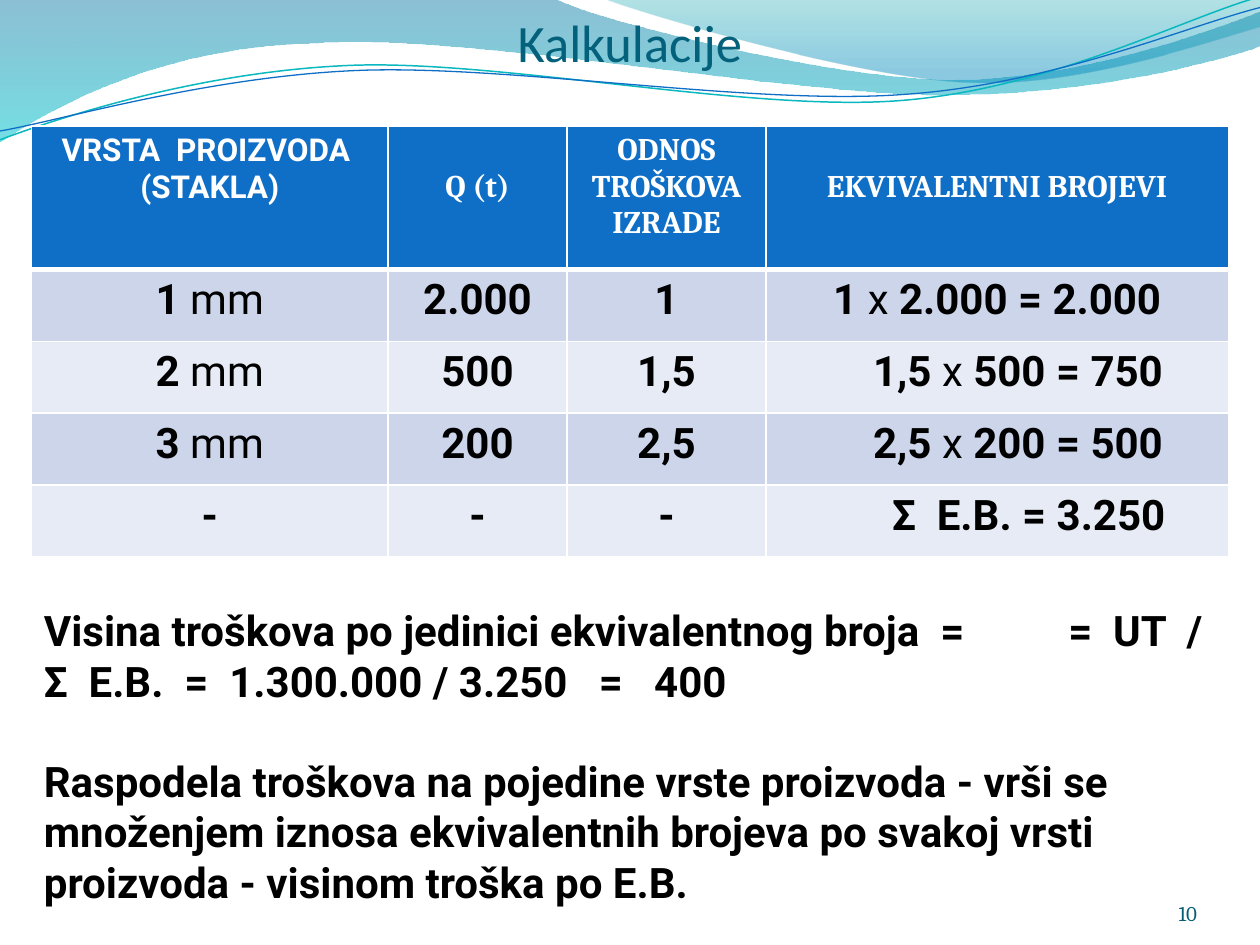
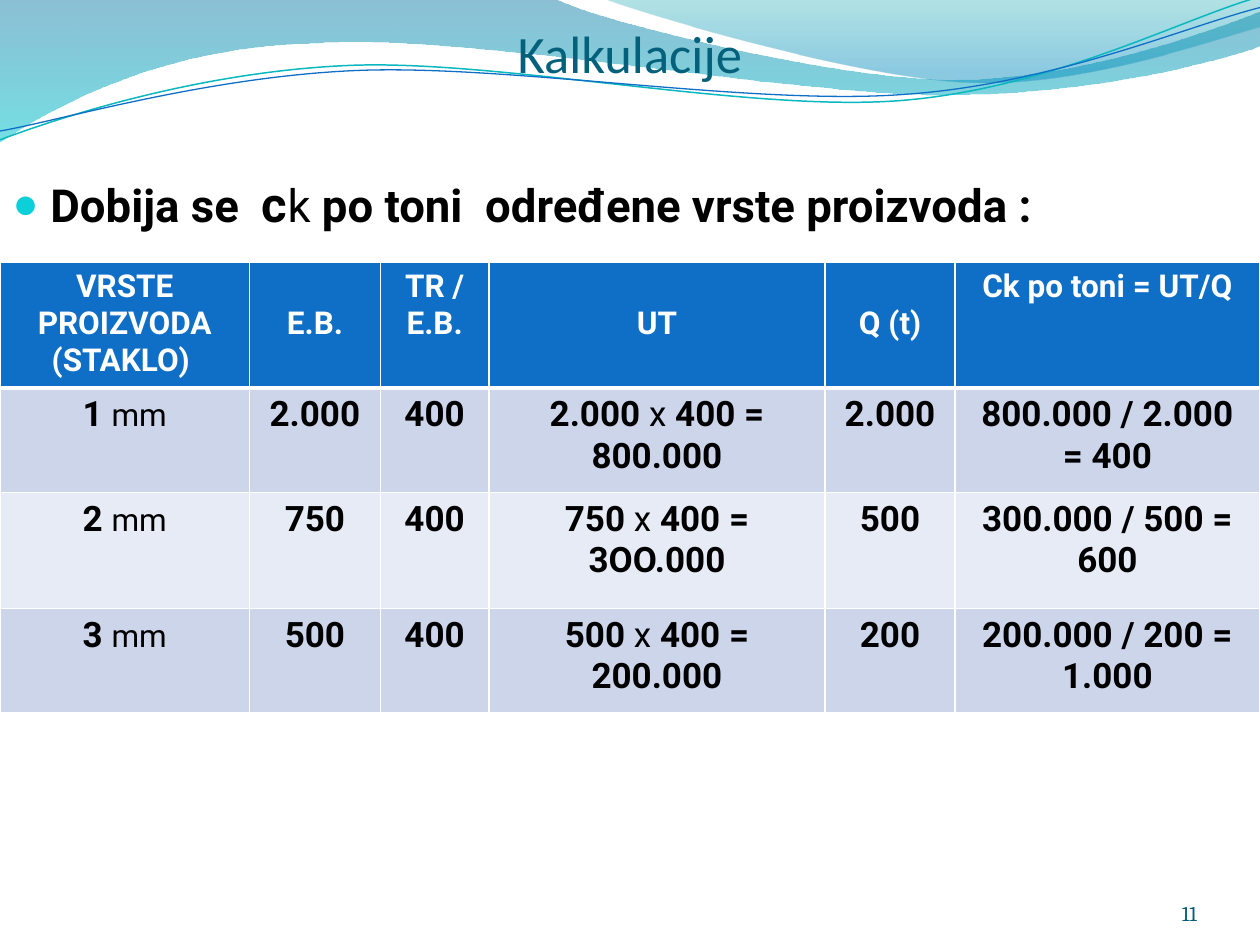
from lxml.etree import SubElement
from pptx import Presentation
from pptx.dml.color import RGBColor
from pptx.enum.text import MSO_ANCHOR, MSO_AUTO_SIZE, PP_ALIGN
from pptx.oxml.ns import qn
from pptx.util import Inches, Pt

WHITE = RGBColor(0xFF, 0xFF, 0xFF)
BLACK = RGBColor(0x00, 0x00, 0x00)
BLUE = RGBColor(0x0F, 0x6F, 0xC6)
TEAL = RGBColor(0x0A, 0xB8, 0xBF)
CYAN = RGBColor(0x0B, 0xD0, 0xD9)
TITLE = RGBColor(0x04, 0x61, 0x7B)
NUMBER = RGBColor(0x04, 0x5D, 0x75)
BANDS = (RGBColor(0xCC, 0xD5, 0xEA), RGBColor(0xE7, 0xEB, 0xF5))
ROBOTO, CAMBRIA, CALIBRI = "Roboto", "Cambria", "Calibri"
HEADER_DROP = 0.29

WAVE_BANDS = [
    dict(start=(0, 0), segments=[
        [(4.4, -0.01)],
        [(4.76, 0.17), (6.64, 0.63), (7.58, 0.63)],
        [(8.53, 0.63), (9.58, 0.26), (10, 0.09)],
        [(10.01, 0.36)],
        [(9.83, 0.44), (8.7, 0.76), (7.46, 0.75)],
        [(6.22, 0.75), (3.82, 0.28), (2.57, 0.34)],
        [(1.29, 0.36), (0.46, 0.83), (-0.01, 1.13)],
        [(0, 0)],
    ], stops=[(0, RGBColor(0x00, 0x74, 0xA1), 45),
              (1, RGBColor(0x00, 0xC6, 0xCF), 55)]),
    dict(start=(4.79, -0.01), segments=[
        [(5.09, 0.11), (6.82, 0.62), (7.69, 0.65)],
        [(8.56, 0.69), (9.61, 0.32), (10, 0.21)],
        [(10, 0)],
        [(4.79, -0.01)],
    ], stops=[(0, RGBColor(0x00, 0xA1, 0xA9), 30),
              (0.8, RGBColor(0x00, 0x8B, 0xBF), 45)]),
]
WAVE_LINES = [
    dict(start=(0, 1.11), segments=[
        [(0.48, 0.93), (1.58, 0.57), (2.77, 0.52)],
        [(3.95, 0.47), (5.93, 0.89), (7.13, 0.8)],
        [(8.33, 0.71), (9.38, 0.15), (9.98, -0.02)],
    ], color=TEAL, width=0.85),
    dict(start=(0, 1.04), segments=[
        [(0.47, 0.96), (1.64, 0.61), (2.83, 0.56)],
        [(4.03, 0.51), (5.97, 0.84), (7.17, 0.75)],
        [(8.36, 0.67), (9.41, 0.21), (10, 0.06)],
    ], color=BLUE, width=0.75),
]


def set_all(target, values):
    for name, value in values.items():
        setattr(target, name, value)


def add_run(p, text, size, color=BLACK, font=ROBOTO, bold=True):
    r = p.add_run()
    r.text = text
    set_all(r.font, dict(size=Pt(size), name=font, bold=bold))
    r.font.color.rgb = color


def place(sp, left, top, width, height):
    set_all(sp, dict(left=Inches(left), top=Inches(top),
                     width=Inches(width), height=Inches(height)))


def bend_segments(sp, segments):
    lines = iter(sp._element.findall(".//" + qn("a:lnTo")))
    for segment in segments:
        curve = next(lines)
        if len(segment) == 3:
            nodes = [next(lines), next(lines)]
            bezier = curve.makeelement(qn("a:cubicBezTo"))
            curve.addprevious(bezier)
            for node in [curve, *nodes]:
                bezier.append(node[0])
                node.getparent().remove(node)


def add_curve(slide, start, segments, close):
    builder = slide.shapes.build_freeform(Inches(start[0]), Inches(start[1]))
    builder.add_line_segments([(Inches(x), Inches(y))
                               for segment in segments for x, y in segment], close=close)
    sp = builder.convert_to_shape()
    bend_segments(sp, segments)
    sp.shadow.inherit = False
    return sp


def add_band(slide, start, segments, stops):
    sp = add_curve(slide, start, segments, True)
    sp.line.fill.background()
    sp.fill.gradient()
    sp.fill.gradient_angle = 270
    for stop, (position, color, _) in zip(sp.fill.gradient_stops, stops):
        stop.position = position
        stop.color.rgb = color
    colors = sp._element.findall(".//" + qn("a:gs") + "/" + qn("a:srgbClr"))
    for node, (_, _, alpha) in zip(colors, stops):
        SubElement(node, qn("a:alpha"), val=str(alpha * 1000))
    return sp


def add_wave_line(slide, start, segments, color, width):
    sp = add_curve(slide, start, segments, False)
    sp.fill.background()
    sp.line.color.rgb = color
    sp.line.width = Pt(width)
    return sp


def move_waves_to_master(prs, slide):
    waves = [add_band(slide, **band) for band in WAVE_BANDS]
    waves += [add_wave_line(slide, **line) for line in WAVE_LINES]
    tree = prs.slide_master.shapes._spTree
    for i, sp in enumerate(waves):
        sp._element.nvSpPr.cNvPr.set("id", str(100 + i))
        tree.insert(2 + i, sp._element)


def set_title(slide, height):
    sp = slide.shapes.title
    place(sp, 0, 0, 10, height)
    tf = sp.text_frame
    set_all(tf, dict(margin_left=0, margin_top=Inches(0.05), margin_right=0,
                     margin_bottom=0, vertical_anchor=MSO_ANCHOR.BOTTOM,
                     auto_size=MSO_AUTO_SIZE.NONE, word_wrap=True))
    p = tf.paragraphs[0]
    p.alignment = PP_ALIGN.CENTER
    add_run(p, "Kalkulacije", 30, TITLE, CALIBRI, False)


def add_text_box(slide, left, top, width, height):
    tf = slide.shapes.add_textbox(Inches(left), Inches(top),
                                  Inches(width), Inches(height)).text_frame
    tf.word_wrap = True
    return tf


def add_slide_number(slide, number, top, height):
    tf = add_text_box(slide, 8.67, top, 0.83, height)
    set_all(tf, dict(margin_left=0, margin_top=0, margin_right=0,
                     margin_bottom=0, vertical_anchor=MSO_ANCHOR.BOTTOM))
    p = tf.paragraphs[0]
    p.alignment = PP_ALIGN.RIGHT
    add_run(p, str(number), 12, NUMBER, CAMBRIA, False)


def set_borders(cell, bottom):
    tcPr = cell._tc.get_or_add_tcPr()
    for side, width in dict(lnL=1, lnR=1, lnT=1, lnB=bottom).items():
        ln = SubElement(tcPr, qn("a:" + side), w=str(Pt(width)))
        fill = SubElement(ln, qn("a:solidFill"))
        SubElement(fill, qn("a:srgbClr"), val=str(WHITE))


def format_cell(cell, color, bottom=1):
    set_borders(cell, bottom)
    cell.fill.solid()
    cell.fill.fore_color.rgb = color
    p = cell.text_frame.paragraphs[0]
    p.alignment = PP_ALIGN.CENTER
    return p


def add_value(p, text, size, unit_size):
    for light, light_size in (("mm", unit_size), ("x ", size)):
        if light in text:
            before, _, after = text.partition(light)
            add_run(p, before, size)
            add_run(p, light, light_size, bold=False)
            if after:
                add_run(p, after, size)
            return
    add_run(p, text, size)


def add_cost_table(slide, left, top, widths, heights, headers, rows, size, unit_size):
    frame = slide.shapes.add_table(len(heights), len(widths), Inches(left), Inches(top),
                                   Inches(sum(widths)), Inches(sum(heights)))
    table = frame.table
    for column, width in zip(table.columns, widths):
        column.width = Inches(width)
    for row, height in zip(table.rows, heights):
        row.height = Inches(height)
    for c, (text, font, lowered) in enumerate(headers):
        cell = table.cell(0, c)
        add_run(format_cell(cell, BLUE, 3), text, 18, WHITE, font)
        if lowered:
            cell.margin_top = Inches(0.05 + HEADER_DROP)
    for r, row in enumerate(rows):
        for c, text in enumerate(row):
            p = format_cell(table.cell(r + 1, c), BANDS[r % 2], 1)
            add_value(p, text, size, unit_size)
    for c in range(len(widths)):
        top_line = table.cell(1, c)._tc.tcPr.find(qn("a:lnT"))
        top_line.set("w", str(Pt(3)))
    return table


def add_cost_notes(slide):
    tf = add_text_box(slide, 0.25, 4.75, 9.42, 2.52)
    p = tf.paragraphs[0]
    add_run(p, "Visina troškova po jedinici ekvivalentnog broja  =\t=  UT  / "
               "Σ  E.B.  =  1.300.000 / 3.250   =   400", 24)
    tabs = SubElement(p._p.get_or_add_pPr(), qn("a:tabLst"))
    SubElement(tabs, qn("a:tab"), pos=str(Inches(8.13)), algn="l")
    p = tf.add_paragraph()
    p.space_before = Pt(28.5)
    add_run(p, "Raspodela troškova na pojedine vrste proizvoda - vrši se množenjem "
               "iznosa ekvivalentnih brojeva po svakoj vrsti proizvoda - visinom "
               "troška po E.B.", 24)


def set_body(slide):
    sp = slide.placeholders[1]
    place(sp, 0, 1.33, 10, 6.17)
    sp.text_frame.auto_size = MSO_AUTO_SIZE.NONE
    p = sp.text_frame.paragraphs[0]
    p.space_before = Pt(5.5)
    pPr = p._p.get_or_add_pPr()
    pPr.set("marL", str(Inches(0.3)))
    pPr.set("indent", str(-Inches(0.3)))
    SubElement(SubElement(pPr, qn("a:buClr")), qn("a:srgbClr"), val=str(CYAN))
    SubElement(pPr, qn("a:buSzPct"), val="95000")
    SubElement(pPr, qn("a:buChar"), char="●")
    add_run(p, "Dobija se  ", 26)
    add_run(p, "c", 28)
    add_run(p, "k ", 26, bold=False)
    add_run(p, "po toni  određene vrste proizvoda :", 26)


def build_equivalents(slide):
    set_title(slide, 0.58)
    headers = [("VRSTA  PROIZVODA  (STAKLA)", ROBOTO, False),
               ("Q (t)", CAMBRIA, True),
               ("ODNOS TROŠKOVA IZRADE", CAMBRIA, False),
               ("EKVIVALENTNI BROJEVI", CAMBRIA, True)]
    rows = [("1 mm", "2.000", "1", "1 x 2.000 = 2.000"),
            ("2 mm", "500", "1,5", "1,5 x 500 = 750"),
            ("3 mm", "200", "2,5", "2,5 x 200 = 500"),
            ("-", "-", "-", "Σ  E.B. = 3.250")]
    table = add_cost_table(slide, 0.25, 1, [2.83, 1.42, 1.58, 3.67],
                           [1.14] + [0.57] * 4, headers, rows, 24, 24)
    for r, indent in ((2, 0.33), (3, 0.33), (4, 0.5)):
        table.cell(r, 3).margin_left = Inches(0.1 + indent)
    add_slide_number(slide, 10, 6.25, 1.1)
    add_cost_notes(slide)


def build_unit_costs(slide):
    set_title(slide, 0.67)
    set_body(slide)
    add_slide_number(slide, 11, 6.95, 0.4)
    headers = [("VRSTE PROIZVODA (STAKLO) ", ROBOTO, False),
               ("E.B.", ROBOTO, True),
               ("TR / E.B.", ROBOTO, False),
               ("UT", ROBOTO, True),
               ("Q (t)", ROBOTO, True),
               ("Ck po toni = UT/Q", ROBOTO, False)]
    rows = [("1 mm", "2.000", "400", "2.000 x 400 = 800.000", "2.000",
             "800.000 / 2.000 = 400"),
            ("2 mm", "750", "400", "750 x 400 = 3OO.000", "500",
             "300.000 / 500 = 600"),
            ("3 mm", "500", "400", "500 x 400 = 200.000", "200",
             "200.000 / 200 = 1.000")]
    add_cost_table(slide, 0, 2.08, [1.98, 1.04, 0.86, 2.67, 1.03, 2.42],
                   [0.95, 0.83, 0.92, 0.83], headers, rows, 20, 18)


def main():
    prs = Presentation()
    prs.slide_width, prs.slide_height = Inches(10), Inches(7.5)
    equivalents = prs.slides.add_slide(prs.slide_layouts[5])
    unit_costs = prs.slides.add_slide(prs.slide_layouts[1])
    move_waves_to_master(prs, equivalents)
    build_equivalents(equivalents)
    build_unit_costs(unit_costs)
    prs.save("out.pptx")


if __name__ == "__main__":
    main()
